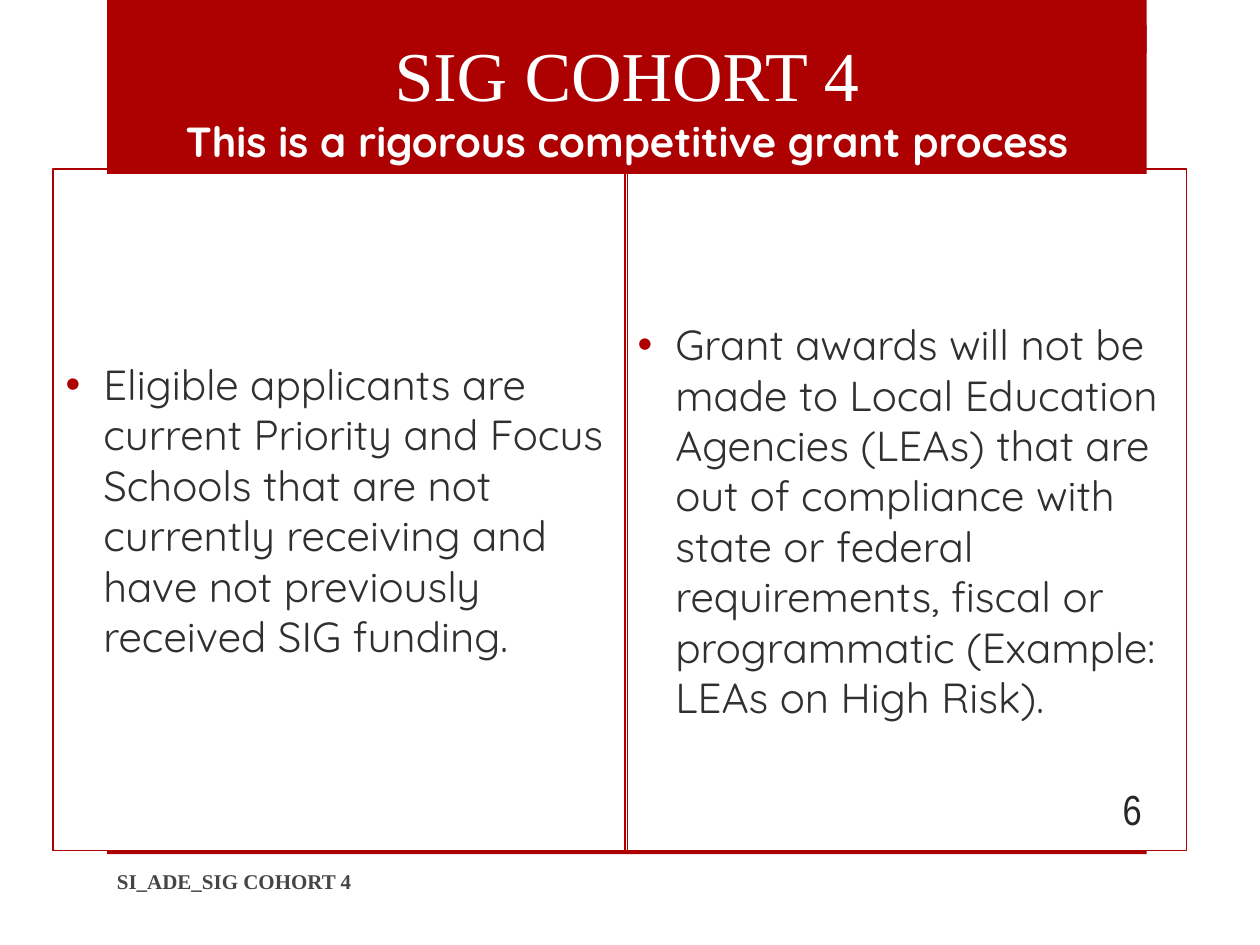
from pptx import Presentation
from pptx.dml.color import RGBColor
from pptx.enum.shapes import MSO_SHAPE
from pptx.enum.text import MSO_ANCHOR, MSO_AUTO_SIZE, PP_ALIGN
from pptx.oxml.ns import qn
from pptx.util import Inches, Pt
from lxml import etree

RECT = MSO_SHAPE.RECTANGLE
TOP, MIDDLE = MSO_ANCHOR.TOP, MSO_ANCHOR.MIDDLE
LEFT, CENTER, RIGHT = PP_ALIGN.LEFT, PP_ALIGN.CENTER, PP_ALIGN.RIGHT
FIXED = MSO_AUTO_SIZE.NONE

RED = RGBColor(0xAD, 0x01, 0x01)
WHITE = RGBColor(0xFF, 0xFF, 0xFF)
BODY = RGBColor(0x30, 0x30, 0x30)
FOOT = RGBColor(0x45, 0x45, 0x45)
DARK = RGBColor(0x26, 0x26, 0x26)

SANS, SERIF, NARROW = "Quicksand", "Times New Roman", "Arial Narrow"


class Deck:
    def __init__(self):
        self.prs = Presentation()
        self.prs.slide_width = Inches(10)
        self.prs.slide_height = Inches(7.5)
        self.slide = self.prs.slides.add_slide(self.prs.slide_layouts[3])

    def place(self, shape, box):
        shape.left, shape.top, shape.width, shape.height = map(Inches, box)

    def frame(self, shape, anchor):
        frame = shape.text_frame
        frame.word_wrap = True
        frame.auto_size = FIXED
        frame.vertical_anchor = anchor
        return frame

    def style(self, para, font, size, color, bold=False, align=LEFT):
        para.alignment = align
        para.font.name = font
        para.font.size = Pt(size)
        para.font.color.rgb = color
        para.font.bold = bold

    def bar(self, *box):
        bar = self.slide.shapes.add_shape(RECT, *map(Inches, box))
        bar.shadow.inherit = False
        bar.fill.solid()
        bar.fill.fore_color.rgb = RED
        bar.line.fill.background()

    def title(self, box, head, sub):
        title = self.slide.shapes.title
        self.place(title, box)
        title.fill.solid()
        title.fill.fore_color.rgb = RED
        frame = self.frame(title, TOP)
        frame.text = f"{head}\n{sub}"
        first, second = frame.paragraphs
        self.style(first, SERIF, 40, WHITE, align=CENTER)
        self.style(second, SANS, 24, WHITE, True, CENTER)

    def panel(self, index, box, text, inset=0.05):
        panel = self.slide.placeholders[index]
        self.place(panel, box)
        panel.line.color.rgb = RED
        panel.line.width = Pt(0.75)
        frame = self.frame(panel, MIDDLE)
        frame.margin_top = Inches(inset)
        frame.text = text
        para = frame.paragraphs[0]
        props = para._p.get_or_add_pPr()
        props.set("marL", str(Inches(0.3)))
        props.set("indent", str(Inches(-0.3)))
        color = etree.SubElement(props, qn("a:buClr"))
        etree.SubElement(color, qn("a:srgbClr"), val=str(RED))
        self.style(para, SANS, 24, BODY)

    def label(self, box, text, *look):
        label = self.slide.shapes.add_textbox(*map(Inches, box))
        frame = self.frame(label, MIDDLE)
        frame.text = text
        self.style(frame.paragraphs[0], *look)


def main():
    deck = Deck()
    deck.bar(0.85, 0, 8.25, 0.42)
    deck.bar(0.85, 6.75, 8.25, 0.03)
    deck.panel(1, (0.42, 1.34, 4.56, 5.41),
               "Eligible applicants are current Priority and Focus Schools "
               "that are not currently receiving and have not previously "
               "received SIG funding.")
    deck.panel(2, (4.96, 1.34, 4.46, 5.41),
               "Grant awards will not be made to Local Education Agencies "
               "(LEAs) that are out of compliance with state or federal "
               "requirements, fiscal or programmatic (Example: LEAs on "
               "High Risk).", 0.22)
    deck.title((0.85, 0.2, 8.25, 1.18), "SIG COHORT 4",
               "This is a rigorous competitive grant process")
    deck.label((0.83, 6.79, 5.33, 0.4), "SI_ADE_SIG COHORT 4",
               SERIF, 12, FOOT, True)
    deck.label((8.33, 6.22, 0.83, 0.4), "6",
               NARROW, 24, DARK, False, RIGHT)
    deck.prs.save("out.pptx")


if __name__ == "__main__":
    main()
